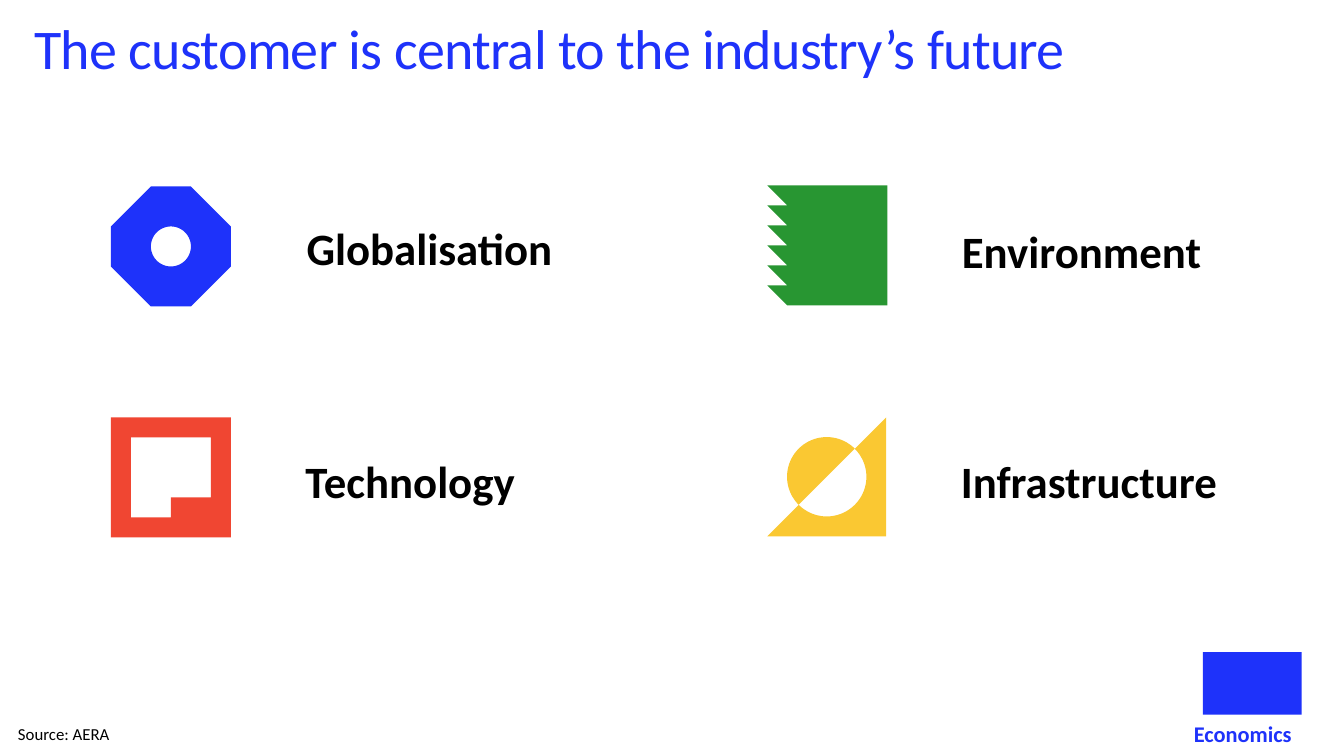
import math
from dataclasses import dataclass

import pptx
import pptx.dml.color
import pptx.enum.shapes
import pptx.enum.text
import pptx.shapes.base
import pptx.slide
import pptx.text.text
import pptx.util

Inches = pptx.util.Inches
Point = tuple[float, float]
Contour = list[Point]


@dataclass(frozen=True)
class Theme:
    font: str = "Calibri"
    blue: str = "1E32FA"
    red: str = "F04632"
    green: str = "289632"
    yellow: str = "FAC832"
    black: str = "000000"
    title_size: int = 40
    label_size: int = 32
    brand_size: int = 16
    source_size: int = 12


@dataclass(frozen=True)
class Label:
    text: str
    left: float
    top: float
    width: float
    height: float
    size: int
    color: str
    bold: bool = False
    inset_x: float = 0
    inset_y: float = 0


@dataclass(frozen=True)
class Icon:
    left: float
    top: float
    size: float
    color: str
    outlines: list[list[Contour]]


THEME = Theme()
GRID = 6
LABEL_WIDTH, LABEL_HEIGHT = 3.31, 1.19


def arc(radius: float, start: int, sweep: int) -> Contour:
    middle = GRID / 2
    return [
        (middle + radius * math.cos(math.radians(angle)),
         middle + radius * math.sin(math.radians(angle)))
        for angle in range(start, start + sweep + 1, 3)
    ]


OCTAGON = [(4, 0), (2, 0), (0, 2), (0, 4), (2, 6), (4, 6), (6, 4), (6, 2)]
SQUARE = [(0, 0), (6, 0), (6, 6), (0, 6)]
NOTCHED_HOLE = [(5, 1), (5, 4), (3, 4), (3, 5), (1, 5), (1, 1)]
SAW_EDGE = [point for row in range(GRID) for point in ((0, row), (1, row + 1))]
CUT_TRIANGLE = [(0, 6), (6, 6), (6, 0)] + arc(2, -45, 180)

ICONS = [
    Icon(1.1, 4.14, 1.19, THEME.red, [[SQUARE, NOTCHED_HOLE]]),
    Icon(1.1, 1.85, 1.19, THEME.blue, [[OCTAGON, arc(1, 0, 360)]]),
    Icon(7.61, 1.84, 1.19, THEME.green, [[SAW_EDGE + [(6, 6), (6, 0)]]]),
    Icon(7.61, 4.14, 1.18, THEME.yellow, [[CUT_TRIANGLE], [arc(2, 135, 180)]]),
]


def topic(text: str, left: float, top: float) -> Label:
    return Label(text, left, top, LABEL_WIDTH, LABEL_HEIGHT,
                 THEME.label_size, THEME.black, bold=True)


TITLE = Label("The customer is central to the industry’s future",
              0.34, 0.21, 12.9, 0.62, THEME.title_size, THEME.blue)
LABELS = [
    Label("Source: AERA", 0.08, 7.13, 10.25, 0.3, THEME.source_size,
          THEME.black, inset_x=0.1, inset_y=0.05),
    Label("Economics", 11.84, 7.14, 1.18, 0.27, THEME.brand_size,
          THEME.blue, bold=True),
    topic("Technology", 3.03, 4.5),
    topic("Globalisation", 3.04, 2.19),
    topic("Environment", 9.54, 2.22),
    topic("Infrastructure", 9.53, 4.5),
]


def set_format(target: object, values: dict[str, object]) -> None:
    for name, value in values.items():
        setattr(target, name, value)


def paint(shape: pptx.shapes.base.BaseShape, color: str) -> None:
    shape.shadow.inherit = False
    shape.fill.solid()
    shape.fill.fore_color.rgb = pptx.dml.color.RGBColor.from_string(color)
    shape.line.fill.background()


def write_label(box: pptx.shapes.base.BaseShape, label: Label) -> pptx.text.text._Run:
    set_format(box, {
        "left": Inches(label.left), "top": Inches(label.top),
        "width": Inches(label.width), "height": Inches(label.height),
    })
    set_format(box.text_frame, {
        "word_wrap": True,
        "auto_size": pptx.enum.text.MSO_AUTO_SIZE.NONE,
        "vertical_anchor": pptx.enum.text.MSO_ANCHOR.TOP,
        "margin_left": Inches(label.inset_x), "margin_right": Inches(label.inset_x),
        "margin_top": Inches(label.inset_y), "margin_bottom": Inches(label.inset_y),
    })
    para = box.text_frame.paragraphs[0]
    para.alignment = pptx.enum.text.PP_ALIGN.LEFT
    span = para.add_run()
    span.text = label.text
    set_format(span.font, {
        "name": THEME.font, "size": pptx.util.Pt(label.size), "bold": label.bold,
    })
    span.font.color.rgb = pptx.dml.color.RGBColor.from_string(label.color)
    return span


def draw_icon(page: pptx.slide.Slide, icon: Icon) -> None:
    unit = Inches(icon.size) / GRID
    for contours in icon.outlines:
        builder = None
        for contour in contours:
            points = [(x * unit, y * unit) for x, y in contour]
            if builder is None:
                builder = page.shapes.build_freeform(*points[0], scale=1.0)
            else:
                builder.move_to(*points[0])
            builder.add_line_segments(points[1:], close=True)
        paint(builder.convert_to_shape(Inches(icon.left), Inches(icon.top)), icon.color)


def main() -> None:
    deck = pptx.Presentation()
    set_format(deck, {"slide_width": Inches(13.33), "slide_height": Inches(7.5)})
    page = deck.slides.add_slide(deck.slide_layouts.get_by_name("Title Only"))

    title = page.shapes.title
    title_span = write_label(title, TITLE)
    title_span.font._element.set("spc", "-50")
    title.text_frame.paragraphs[0].line_spacing = 0.9

    emblem = page.shapes.add_shape(
        pptx.enum.shapes.MSO_SHAPE.RECTANGLE,
        Inches(11.93), Inches(6.47), Inches(0.98), Inches(0.62))
    paint(emblem, THEME.blue)

    for icon in ICONS:
        draw_icon(page, icon)
    for label in LABELS:
        box = page.shapes.add_textbox(0, 0, 0, 0)
        write_label(box, label)

    deck.save("out.pptx")


if __name__ == "__main__":
    main()
